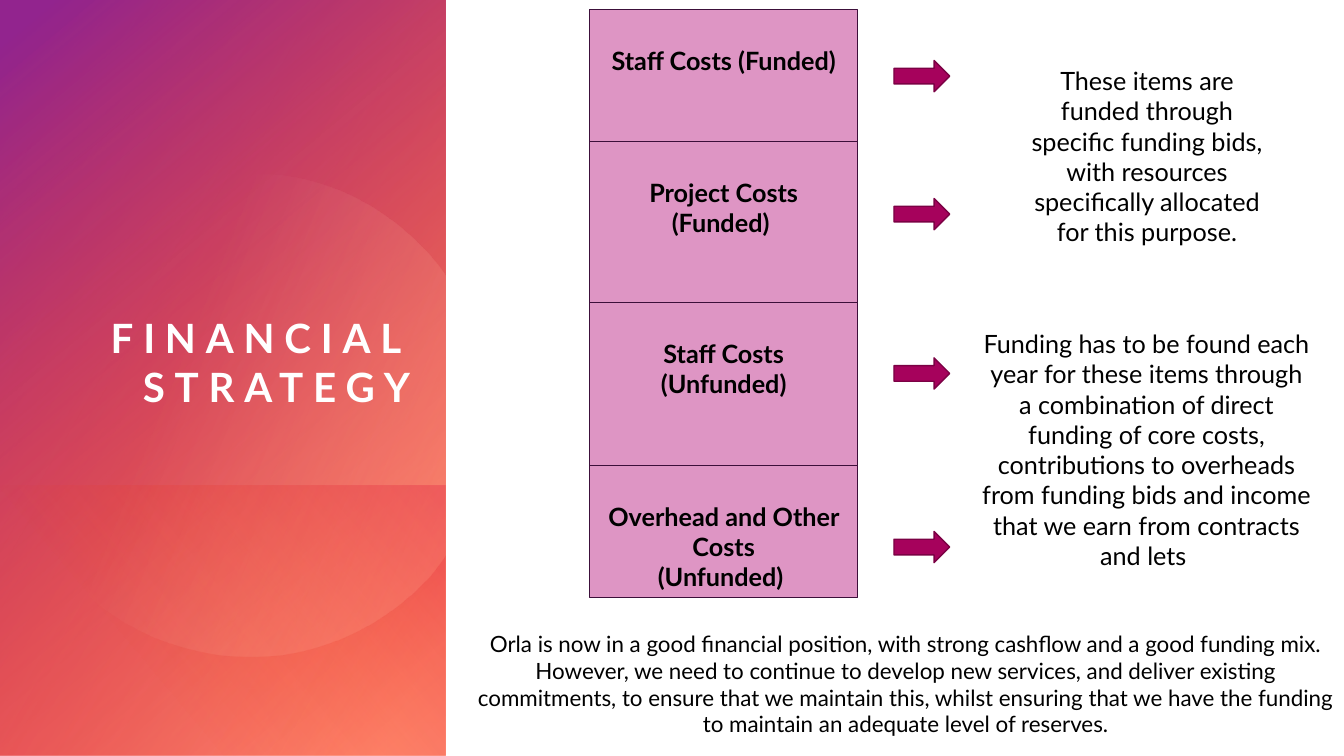
from lxml.etree import SubElement
from pptx import Presentation
from pptx.dml.color import RGBColor
from pptx.enum.shapes import MSO_SHAPE as SHAPE
from pptx.enum.text import MSO_ANCHOR as ANCHOR, MSO_AUTO_SIZE as AUTO, PP_ALIGN as ALIGN
from pptx.oxml.ns import qn
from pptx.util import Pt


def rgb(hex_text):
    return RGBColor.from_string(hex_text)


def write(tf, lines, size=18, color="000000", bold=False, align=ALIGN.CENTER,
          anchor=ANCHOR.TOP, margins=(7.2, 3.6, 7.2, 3.6), spacing=None):
    tf.word_wrap, tf.auto_size, tf.vertical_anchor = True, AUTO.NONE, anchor
    (tf.margin_left, tf.margin_top,
     tf.margin_right, tf.margin_bottom) = [Pt(m) for m in margins]
    for i, line in enumerate(lines):
        p = tf.add_paragraph() if i else tf.paragraphs[0]
        p.alignment = align
        r = p.add_run()
        r.text = line
        r.font.name, r.font.size, r.font.bold = Slide.FONT, Pt(size), bold
        r.font.color.rgb = rgb(color)
        if spacing:
            r.font._element.set("spc", str(spacing * 100))


def bezier(a, b, c, d, steps=24):
    for t in (i / steps for i in range(1, steps + 1)):
        u = 1 - t
        yield tuple(u**3 * e + 3 * u * u * t * f + 3 * u * t * t * g + t**3 * h
                    for e, f, g, h in zip(a, b, c, d))


class Slide:
    FONT = "Lato"

    def __init__(self, prs):
        self.s = prs.slides.add_slide(prs.slide_layouts[5])
        self.shapes = self.s.shapes

    def title(self, text, x, y, w, h, **fmt):
        sp = self.shapes.title
        sp.left, sp.top, sp.width, sp.height = Pt(x), Pt(y), Pt(w), Pt(h)
        write(sp.text_frame, [text], **fmt)
        # Bring the title in front of the panel
        self.shapes._spTree.append(sp._element)

    def text(self, text, x, y, w, h, **fmt):
        sp = self.shapes.add_textbox(Pt(x), Pt(y), Pt(w), Pt(h))
        write(sp.text_frame, [text], **fmt)

    def shape(self, kind, x, y, w, h, fill=None, line=None, weight=1):
        sp = self.shapes.add_shape(kind, Pt(x), Pt(y), Pt(w), Pt(h))
        sp.shadow.inherit = False
        if fill:
            sp.fill.solid()
            sp.fill.fore_color.rgb = rgb(fill)
        if line:
            sp.line.color.rgb, sp.line.width = rgb(line), Pt(weight)
        else:
            sp.line.fill.background()
        return sp

    def gradient(self, sp, stops, angle):
        sp.fill.gradient()
        sp.fill.gradient_angle = 360 - angle
        for stop, (position, color, _) in zip(sp.fill.gradient_stops, stops):
            stop.position, stop.color.rgb = position / 100, rgb(color)
        colors = sp._element.spPr.iter(qn("a:srgbClr"))
        for color, (_, _, opacity) in zip(colors, stops):
            SubElement(color, qn("a:alpha"), val=str(opacity * 1000))

    def turned_panel(self, x, y, w, h, stops, angle):
        """Panel seen at x, y, w, h, made as a mirrored rectangle turned by 90 degrees."""
        sp = self.shape(SHAPE.RECTANGLE, x + (w - h) / 2, y + (h - w) / 2, h, w)
        sp.rotation = 90
        sp._element.spPr.xfrm.set("flipH", "1")
        self.gradient(sp, stops, angle)

    def outline(self, points, stops, angle):
        points = [(Pt(x), Pt(y)) for x, y in points]
        builder = self.shapes.build_freeform(*points[0])
        builder.add_line_segments(points[1:], close=True)
        sp = builder.convert_to_shape()
        sp.shadow.inherit = False
        sp.line.fill.background()
        self.gradient(sp, stops, angle)


def main():
    prs = Presentation()
    prs.slide_width, prs.slide_height = Pt(960), Pt(540)
    s = Slide(prs)

    # Gradient side panel
    panel_w = 318.5
    s.turned_panel(0, 0, panel_w, 540, [(8, "FF907A", 100), (100, "DA002F", 72)], 60)
    s.turned_panel(0, 0, panel_w, 540, [(0, "FE4A00", 0), (96, "92248E", 100)], 40)
    s.turned_panel(0, 347, panel_w, 193, [(2, "DA002F", 35), (67, "FE4A00", 0)], 130)

    # Pale circle cut off at the panel edge
    circle = [(178, 124)]
    circle += bezier(circle[-1], (189, 124), (201, 125), (212, 127))
    circle += bezier(circle[-1], (253, 135), (287, 158), (312, 188))
    circle += [(panel_w, 197), (panel_w, 396), (310, 408)]
    circle += bezier(circle[-1], (270, 454), (207, 479), (143, 465))
    circle += bezier(circle[-1], (49, 446), (-11, 355), (9, 261))
    circle += bezier(circle[-1], (25, 180), (97, 123), circle[0])
    s.outline(circle, [(39, "FFDBCC", 0), (100, "FF907A", 29)], 22)

    s.title("FINANCIAL STRATEGY", 66.2, 233.3, 226.8, 59.8, size=28.8, color="FFFFFF",
            bold=True, align=ALIGN.RIGHT, anchor=ANCHOR.BOTTOM,
            margins=(0, 0, 0, 0), spacing=7)

    # Stack of costs, each with its arrow
    costs = [
        (7, 94.3, 43.2, ["Staff Costs (Funded)"]),
        (101.3, 116.6, 141.8, ["Project Costs (Funded) "]),
        (216.4, 116.6, 255.6, ["Staff Costs", "(Unfunded)"]),
        (332.6, 94.3, 379.6, ["Overhead and Other Costs", "(Unfunded) "]),
    ]
    for top, height, arrow_top, lines in costs:
        box = s.shape(SHAPE.RECTANGLE, 421.2, top, 191.5, height, "DE95C4", "3C0F3A", 0.75)
        write(box.text_frame, lines, bold=True, margins=(7.2, 25.2, 7.2, 3.6))
        s.shape(SHAPE.RIGHT_ARROW, 638.6, arrow_top, 39.8, 22.3, "A6025C", "7B0144")

    # Explanations
    s.text("These items are funded through specific funding bids, with resources "
           "specifically allocated for this purpose.", 723.6, 43.2, 191.5, 138.2)
    s.text("Funding has to be found each year for these items through a combination of "
           "direct funding of core costs, contributions to overheads from funding bids "
           "and income that we earn from contracts and lets ", 694.1, 231.1, 249.8, 181.4)
    s.text("Orla is now in a good financial position, with strong cashflow and a good "
           "funding mix. However, we need to continue to develop new services, and "
           "deliver existing commitments, to ensure that we maintain this, whilst "
           "ensuring that we have the funding to maintain an adequate level of reserves.",
           333.4, 446.4, 627.1, 85, size=16)

    prs.save("out.pptx")


if __name__ == "__main__":
    main()
